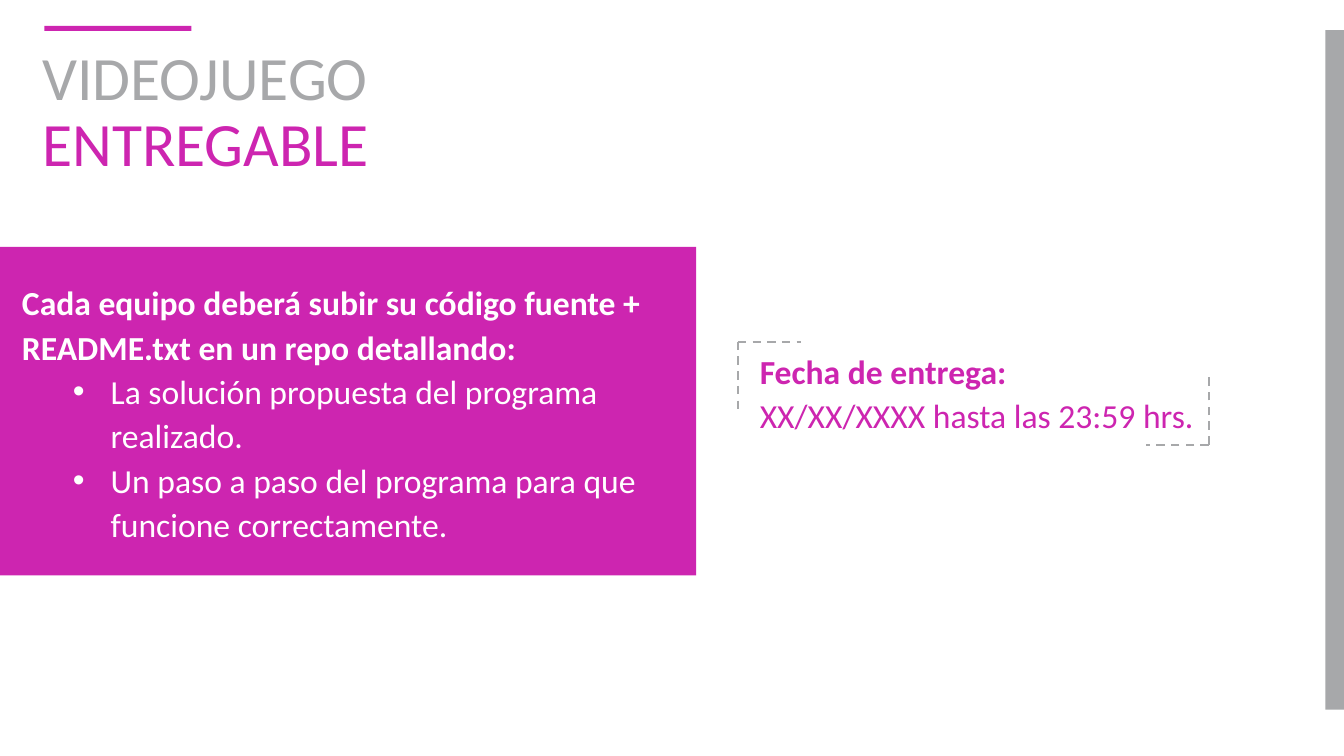
import pptx
import pptx.dml.color
import pptx.enum.dml
import pptx.enum.shapes
import pptx.enum.text
import pptx.oxml.ns
import pptx.util
from lxml import etree

Pt = pptx.util.Pt
RGBColor = pptx.dml.color.RGBColor
qn = pptx.oxml.ns.qn
MSO_ANCHOR = pptx.enum.text.MSO_ANCHOR
PP_ALIGN = pptx.enum.text.PP_ALIGN

MAGENTA = RGBColor(0xCD, 0x25, 0xB0)
GRAY = RGBColor(0xA7, 0xA8, 0xAA)
WHITE = RGBColor(0xFF, 0xFF, 0xFF)
FONT = "Calibri"

# Content
TITLE = [("VIDEOJUEGO", GRAY), ("ENTREGABLE", MAGENTA)]
TASK = "Cada equipo deberá subir su código fuente + README.txt en un repo detallando:"
DETAILS = [
    "La solución propuesta del programa realizado.",
    "Un paso a paso del programa para que funcione correctamente.",
]
DUE_LABEL = "Fecha de entrega:"
DUE_DATE = "XX/XX/XXXX hasta las 23:59 hrs."

# Layout in points: left, top, width, height
SIDE_BAR = (946.8, 21.6, 13.2, 485.3)
TITLE_BOX = (23, 28.8, 828, 104.4)
TITLE_RULE = (31.7, 18.4, 105.1, 3.6)
PANEL = (0, 176.4, 497.3, 234.7)
TASK_BOX = (0, 195.1, 497.3, 197.3)
DUE_BOX = (527, 244.1, 352.1, 69.8)
FRAME = (527, 244.1, 336.5, 73.5)
ARM_X, ARM_Y = 45, 50.4


def add_text(p, text, size=24, color=WHITE, bold=False, spacing=1.1,
             indent=8.64, bullet=False):
    """Add a formatted run to a paragraph."""
    r = p.add_run()
    r.text = text
    r.font.name = FONT
    r.font.size = Pt(size)
    r.font.bold = bold
    r.font.color.rgb = color
    p.line_spacing = spacing
    p.alignment = PP_ALIGN.LEFT
    pPr = p._p.get_or_add_pPr()
    pPr.set("marL", str(Pt(72 if bullet else indent)))
    pPr.set("indent", str(Pt(-27 if bullet else 0)))
    if bullet:
        p.level = 1
        clr = etree.SubElement(pPr, qn("a:buClr"))
        etree.SubElement(clr, qn("a:srgbClr"), val=str(color))
        etree.SubElement(pPr, qn("a:buFont"), typeface="Arial")
        etree.SubElement(pPr, qn("a:buChar"), char="•")


def add_bar(s, box, color):
    sp = s.shapes.add_shape(pptx.enum.shapes.MSO_SHAPE.RECTANGLE, *map(Pt, box))
    sp.shadow.inherit = False
    sp.fill.solid()
    sp.fill.fore_color.rgb = color
    sp.line.fill.background()


def add_paragraphs(s, box, items):
    tf = s.shapes.add_textbox(*map(Pt, box)).text_frame
    tf.word_wrap = True
    for i, (text, fmt) in enumerate(items):
        p = tf.add_paragraph() if i else tf.paragraphs[0]
        add_text(p, text, **fmt)


def add_dash(s, x1, y1, x2, y2):
    line = s.shapes.add_connector(pptx.enum.shapes.MSO_CONNECTOR.STRAIGHT,
                                  Pt(x1), Pt(y1), Pt(x2), Pt(y2))
    line.line.color.rgb = GRAY
    line.line.width = Pt(1.5)
    line.line.dash_style = pptx.enum.dml.MSO_LINE.DASH
    etree.SubElement(line._element.spPr, qn("a:effectLst"))


def main():
    prs = pptx.Presentation()
    prs.slide_width, prs.slide_height = Pt(960), Pt(540)
    s = prs.slides.add_slide(prs.slide_layouts[5])

    # Title
    title = s.shapes.title
    title.left, title.top, title.width, title.height = map(Pt, TITLE_BOX)
    tf = title.text_frame
    tf.word_wrap = True
    tf.auto_size = pptx.enum.text.MSO_AUTO_SIZE.NONE
    tf.vertical_anchor = MSO_ANCHOR.MIDDLE
    p = tf.paragraphs[0]
    for i, (text, color) in enumerate(TITLE):
        if i:
            p.add_line_break()
        add_text(p, text, size=44, color=color, spacing=0.9, indent=0)

    # Colour bars and panel
    for box, color in [(SIDE_BAR, GRAY), (TITLE_RULE, MAGENTA), (PANEL, MAGENTA)]:
        add_bar(s, box, color)

    # Due date and task
    add_paragraphs(s, DUE_BOX, [(DUE_LABEL, dict(color=MAGENTA, bold=True)),
                                (DUE_DATE, dict(color=MAGENTA))])
    add_paragraphs(s, TASK_BOX, [(TASK, dict(bold=True))]
                   + [(text, dict(bullet=True)) for text in DETAILS])

    # Dashed corners: top left and bottom right of the frame
    x, y, w, h = FRAME
    for cx, cy, side in [(x, y, 1), (x + w, y + h, -1)]:
        add_dash(s, cx, cy, cx + side * ARM_X, cy)
        add_dash(s, cx, cy, cx, cy + side * ARM_Y)

    prs.save("out.pptx")


if __name__ == "__main__":
    main()
